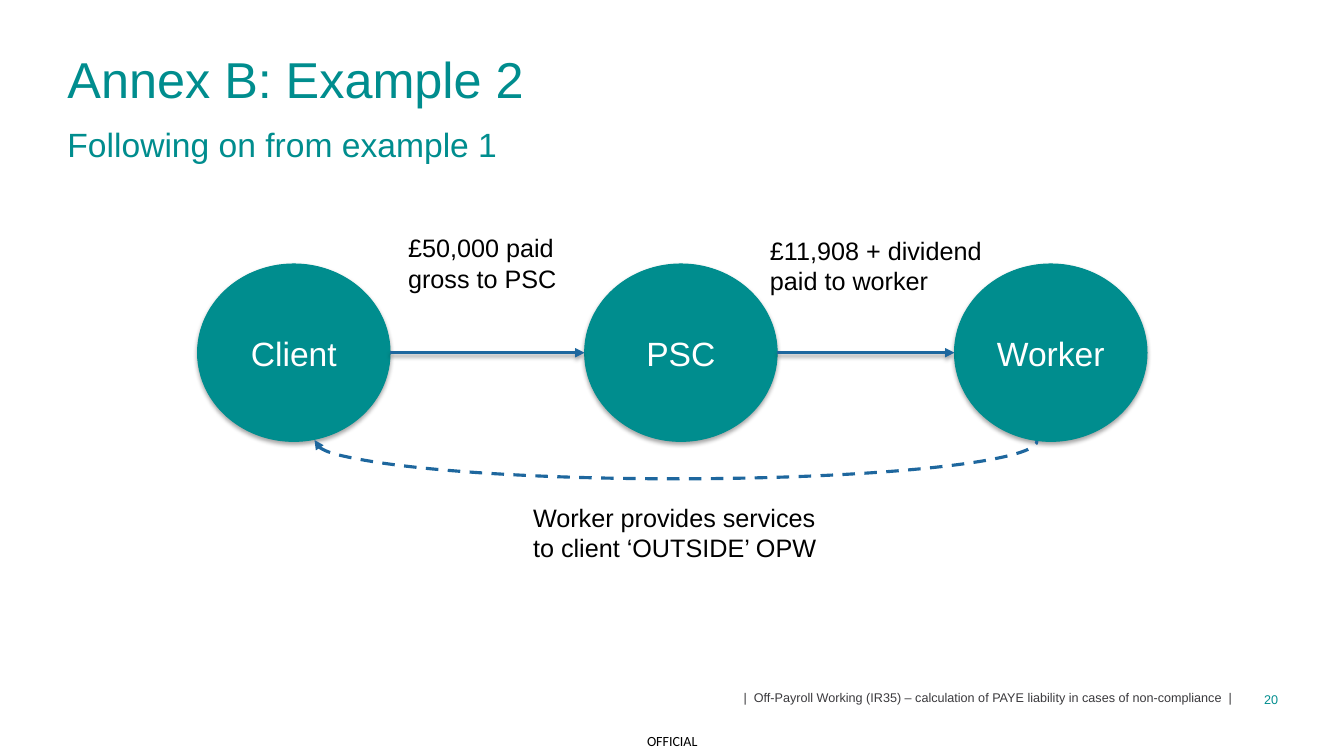
"""Build the Annex B slide showing payments between client, PSC and worker."""
import pptx
import pptx.dml.color
import pptx.enum.dml
import pptx.enum.shapes
import pptx.enum.text
import pptx.oxml
import pptx.oxml.ns
import pptx.util

Pt = pptx.util.Pt
RGBColor = pptx.dml.color.RGBColor
ALIGN = pptx.enum.text.PP_ALIGN
ANCHOR = pptx.enum.text.MSO_ANCHOR
SHAPE = pptx.enum.shapes.MSO_SHAPE

TEAL = RGBColor(0x00, 0x8D, 0x8E)
BLUE = RGBColor(0x1E, 0x67, 0x9E)
GREY = RGBColor(0x3B, 0x3A, 0x3D)
BLACK = RGBColor(0, 0, 0)
WHITE = RGBColor(255, 255, 255)

HEADING = [("Annex B: Example 2", 36), ("Following on from example 1", 24)]
PARTIES = [("Client", 141.1), ("PSC", 417.6), ("Worker", 681.8)]
PARTY_TOP, PARTY_WIDTH, PARTY_HEIGHT = 188.6, 137.5, 126.7
FLOWS = [
    ("£50,000 paid gross to PSC", (284.4, 162.7, 123.8, 51)),
    ("£11,908 + dividend paid to worker", (542.9, 164.2, 165.6, 51)),
    ("Worker provides services to client ‘OUTSIDE’ OPW", (373.7, 355, 225.4, 51)),
]
SERVICE_ARC = (224.6, 288, 516.2, 54)
MARGINALIA = [
    ("OFFICIAL", (451.4, 519.1, 57.6, 20.9), 10, "Calibri", BLACK, ALIGN.CENTER, ANCHOR.MIDDLE),
    ("20", (888.5, 493.9, 24.5, 10.8), 9, "Arial", TEAL, ALIGN.RIGHT, ANCHOR.TOP),
    ("|  Off-Payroll Working (IR35) – calculation of PAYE liability in cases of non-compliance  |",
     (173.5, 490.3, 706.3, 15.8), 9, "Arial", GREY, ALIGN.RIGHT, ANCHOR.MIDDLE),
]


def points(box):
    return [Pt(length) for length in box]


def add_run(paragraph, text, size, color, font="Arial"):
    run = paragraph.add_run()
    run.text = text
    run.font.name = font
    run.font.size = Pt(size)
    run.font.color.rgb = color


def clear_insets(frame):
    frame.margin_left = frame.margin_right = frame.margin_top = frame.margin_bottom = 0


def add_label(slide, text, box, size=18, font="Arial", color=BLACK,
              align=ALIGN.LEFT, anchor=ANCHOR.TOP, inset=True):
    frame = slide.shapes.add_textbox(*points(box)).text_frame
    frame.word_wrap = True
    frame.vertical_anchor = anchor
    if not inset:
        clear_insets(frame)
    frame.paragraphs[0].alignment = align
    add_run(frame.paragraphs[0], text, size, color, font)


def add_soft_shadow(part):
    part._element.spPr.append(pptx.oxml.parse_xml(
        f'<a:effectLst {pptx.oxml.ns.nsdecls("a")}>'
        f'<a:outerShdw blurRad="{Pt(3.1)}" dist="{Pt(1.8)}" dir="5400000" rotWithShape="0">'
        '<a:srgbClr val="000000"><a:alpha val="35000"/></a:srgbClr>'
        '</a:outerShdw></a:effectLst>'))


def style_arrow(part, end):
    part.line.color.rgb = BLUE
    part.line.width = Pt(2.25)
    part.line._get_or_add_ln().append(pptx.oxml.parse_xml(
        f'<a:{end} {pptx.oxml.ns.nsdecls("a")} type="triangle"/>'))


def add_heading(slide):
    heading = slide.shapes.title
    heading.left, heading.top, heading.width, heading.height = points((48.2, 37.4, 864, 65.5))
    frame = heading.text_frame
    frame.auto_size = pptx.enum.text.MSO_AUTO_SIZE.NONE
    frame.vertical_anchor = ANCHOR.TOP
    clear_insets(frame)
    paragraph = frame.paragraphs[0]
    paragraph.alignment = ALIGN.LEFT
    paragraph.line_spacing = Pt(40)
    paragraph.space_after = Pt(8)
    for index, (text, size) in enumerate(HEADING):
        if index:
            paragraph.add_line_break()
        add_run(paragraph, text, size, TEAL)


def add_party(slide, name, left):
    party = slide.shapes.add_shape(
        SHAPE.OVAL, *points((left, PARTY_TOP, PARTY_WIDTH, PARTY_HEIGHT)))
    party.fill.solid()
    party.fill.fore_color.rgb = TEAL
    party.line.color.rgb = TEAL
    party.line.width = Pt(0.75)
    add_soft_shadow(party)
    frame = party.text_frame
    frame.vertical_anchor = ANCHOR.MIDDLE
    frame.paragraphs[0].alignment = ALIGN.CENTER
    add_run(frame.paragraphs[0], name, 24, WHITE)


def add_payment(slide, payer_left, payee_left):
    middle = PARTY_TOP + PARTY_HEIGHT / 2
    payment = slide.shapes.add_connector(
        pptx.enum.shapes.MSO_CONNECTOR.STRAIGHT,
        *points((payer_left + PARTY_WIDTH, middle, payee_left, middle)))
    style_arrow(payment, "tailEnd")
    add_soft_shadow(payment)


def add_service(slide):
    service = slide.shapes.add_shape(SHAPE.ARC, *points(SERVICE_ARC))
    service.adjustments[0] = 107.904
    service.adjustments[1] = 0
    service._element.spPr.xfrm.set("flipV", "1")
    service.fill.background()
    service.shadow.inherit = False
    service.line.dash_style = pptx.enum.dml.MSO_LINE.DASH
    style_arrow(service, "headEnd")


def main():
    deck = pptx.Presentation()
    deck.slide_width, deck.slide_height = Pt(960), Pt(540)
    slide = deck.slides.add_slide(deck.slide_layouts[5])
    add_heading(slide)
    for text, box, size, font, color, align, anchor in MARGINALIA:
        add_label(slide, text, box, size, font, color, align, anchor, inset=False)
    for name, left in PARTIES:
        add_party(slide, name, left)
    for (_, payer_left), (_, payee_left) in zip(PARTIES, PARTIES[1:]):
        add_payment(slide, payer_left, payee_left)
    add_service(slide)
    for text, box in FLOWS:
        add_label(slide, text, box)
    deck.save("out.pptx")


if __name__ == "__main__":
    main()
